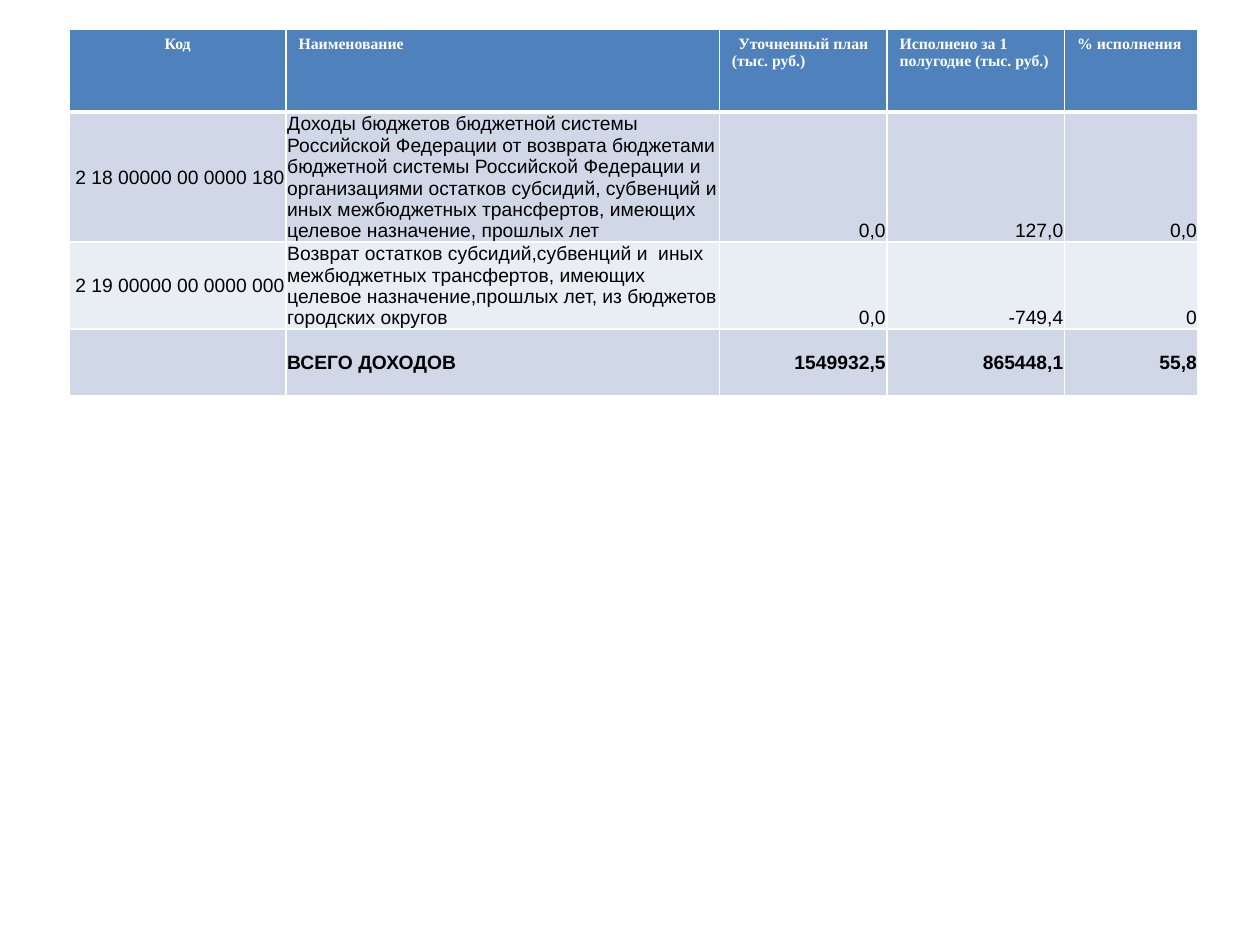
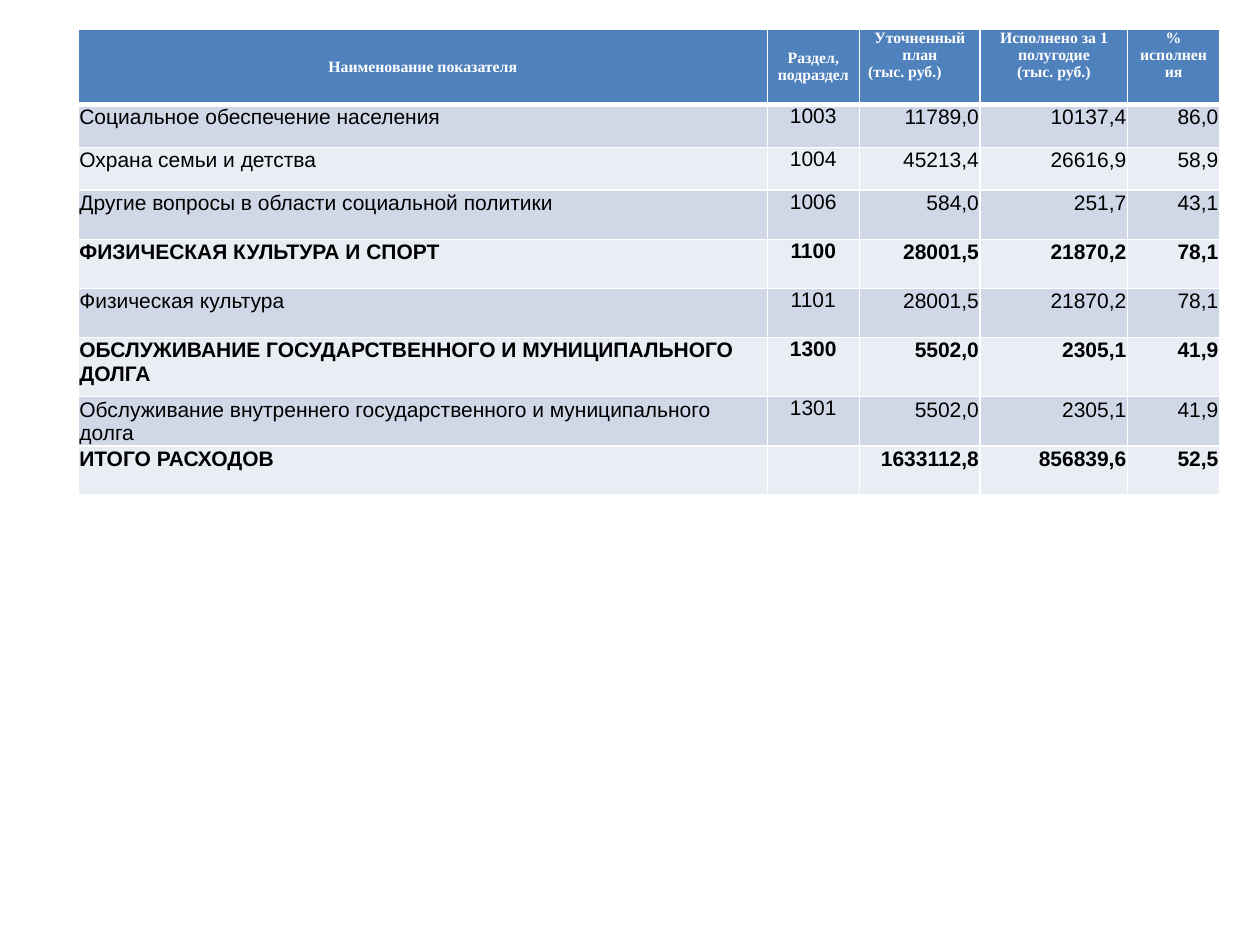
import pptx
import pptx.util
import pptx.dml.color
import pptx.enum.text
import pptx.oxml.ns
import lxml.etree
from dataclasses import dataclass

Inches = pptx.util.Inches
Pt = pptx.util.Pt
ALIGN = {"l": pptx.enum.text.PP_ALIGN.LEFT,
         "c": pptx.enum.text.PP_ALIGN.CENTER,
         "r": pptx.enum.text.PP_ALIGN.RIGHT}
ANCHOR = {"t": pptx.enum.text.MSO_ANCHOR.TOP,
          "m": pptx.enum.text.MSO_ANCHOR.MIDDLE,
          "b": pptx.enum.text.MSO_ANCHOR.BOTTOM}


@dataclass(frozen=True)
class Theme:
    header_fill: str = "4F81BD"
    bands: tuple = ("D0D8E8", "E9EDF4")
    grid: str = "FFFFFF"
    header_text: str = "FFFFFF"
    body_text: str = "000000"
    header_font: str = "Times New Roman"
    body_font: str = "Arial"
    header_size: int = 9
    grid_width: int = 1
    header_rule: int = 3


THEME = Theme()
TIGHT = (0.01, 0.01, 0.01, 0)   # left, top, right, bottom
SIDES = (0.07, 0, 0.07, 0)
ROOMY = (0.1, 0.05, 0.1, 0.05)

# Content: header lines carry one alignment letter each; rows are (bold, anchors, values)
INCOME = {
    "at": (0.55, 0.23),
    "columns": (1.72, 3.44, 1.33, 1.41, 1.06),
    "heights": (0.66, 1.03, 0.69, 0.53),
    "size": 11,
    "header": [("Код", "c"), ("Наименование", "l"),
               ("Уточненный план\n(тыс. руб.)", "cl"),
               ("Исполнено за 1 полугодие (тыс. руб.)", "l"),
               ("% исполнения", "l")],
    "header_anchors": "ttttt",
    "header_insets": ROOMY,
    "aligns": "rlrrr",
    "insets": [TIGHT] * 5,
    "rows": [
        (False, "mmbbb", (
            "2 18 00000 00 0000 180",
            "Доходы бюджетов бюджетной системы Российской Федерации от возврата "
            "бюджетами бюджетной системы Российской Федерации и организациями "
            "остатков субсидий, субвенций и иных межбюджетных трансфертов, "
            "имеющих целевое назначение, прошлых лет",
            "0,0", "127,0", "0,0")),
        (False, "mtbbb", (
            "2 19 00000 00 0000 000",
            "Возврат остатков субсидий,субвенций и  иных межбюджетных трансфертов, "
            "имеющих целевое назначение,прошлых лет, из бюджетов городских округов",
            "0,0", "-749,4", "0")),
        (True, "mmmmm", ("", "ВСЕГО ДОХОДОВ", "1549932,5", "865448,1", "55,8")),
    ],
}

EXPENSES = {
    "at": (0.62, 0.23),
    "columns": (5.47, 0.73, 0.96, 1.17, 0.73),
    "heights": (0.6, 0.34, 0.34, 0.39, 0.39, 0.39, 0.47, 0.39, 0.39),
    "size": 12,
    "header": [("Наименование показателя", "c"), ("Раздел, подраздел", "c"),
               ("Уточненный план\n(тыс. руб.)", "cl"),
               ("Исполнено за 1 полугодие\n(тыс. руб.)", "cc"),
               ("% исполнения", "c")],
    "header_anchors": "mmttt",
    "header_insets": SIDES,
    "aligns": "lcrrr",
    "insets": [TIGHT, SIDES, TIGHT, TIGHT, TIGHT],
    "rows": [(bold, "ttttt", values) for bold, *values in [
        (False, "Социальное обеспечение населения", "1003", "11789,0", "10137,4", "86,0"),
        (False, "Охрана семьи и детства", "1004", "45213,4", "26616,9", "58,9"),
        (False, "Другие вопросы в области социальной политики", "1006",
         "584,0", "251,7", "43,1"),
        (True, "ФИЗИЧЕСКАЯ КУЛЬТУРА И СПОРТ", "1100", "28001,5", "21870,2", "78,1"),
        (False, "Физическая культура", "1101", "28001,5", "21870,2", "78,1"),
        (True, "ОБСЛУЖИВАНИЕ ГОСУДАРСТВЕННОГО И МУНИЦИПАЛЬНОГО ДОЛГА", "1300",
         "5502,0", "2305,1", "41,9"),
        (False, "Обслуживание внутреннего государственного и муниципального долга",
         "1301", "5502,0", "2305,1", "41,9"),
        (True, "ИТОГО РАСХОДОВ", "", "1633112,8", "856839,6", "52,5"),
    ]],
}


def color(value):
    return pptx.dml.color.RGBColor.from_string(value)


# Cell borders, which must come before the fill in the cell properties
def set_borders(cell, top, bottom):
    properties = cell._tc.get_or_add_tcPr()
    qn = pptx.oxml.ns.qn
    widths = {"L": THEME.grid_width, "R": THEME.grid_width, "T": top, "B": bottom}
    for side, width in widths.items():
        line = lxml.etree.SubElement(properties, qn(f"a:ln{side}"), w=str(Pt(width)))
        solid = lxml.etree.SubElement(line, qn("a:solidFill"))
        lxml.etree.SubElement(solid, qn("a:srgbClr"), val=THEME.grid)


def style_cell(cell, text, aligns, anchor, insets, fill, font, size, ink, bold):
    cell.margin_left, cell.margin_top, cell.margin_right, cell.margin_bottom = map(
        Inches, insets)
    cell.vertical_anchor = ANCHOR[anchor]
    cell.fill.solid()
    cell.fill.fore_color.rgb = color(fill)
    cell.text_frame.text = text
    for para, align in zip(cell.text_frame.paragraphs, aligns):
        para.alignment = ALIGN[align]
        for span in para.runs:
            span.font.name, span.font.size = font, Pt(size)
            span.font.bold = bold
            span.font.color.rgb = color(ink)


def add_budget_table(deck, budget):
    page = deck.slides.add_slide(deck.slide_layouts[6])
    columns, heights = budget["columns"], budget["heights"]
    table = page.shapes.add_table(
        len(heights), len(columns), *map(Inches, budget["at"]),
        Inches(sum(columns)), Inches(sum(heights))).table
    for column, width in zip(table.columns, columns):
        column.width = Inches(width)
    for row, height in zip(table.rows, heights):
        row.height = Inches(height)

    # Header row
    for index, (text, aligns) in enumerate(budget["header"]):
        cell = table.cell(0, index)
        set_borders(cell, THEME.grid_width, THEME.header_rule)
        style_cell(cell, text, aligns, budget["header_anchors"][index],
                   budget["header_insets"], THEME.header_fill, THEME.header_font,
                   THEME.header_size, THEME.header_text, True)

    # Banded body rows
    for number, (bold, anchors, values) in enumerate(budget["rows"]):
        top = THEME.grid_width if number else THEME.header_rule
        for index, text in enumerate(values):
            cell = table.cell(number + 1, index)
            set_borders(cell, top, THEME.grid_width)
            style_cell(cell, text, budget["aligns"][index], anchors[index],
                       budget["insets"][index], THEME.bands[number % 2],
                       THEME.body_font, budget["size"], THEME.body_text, bold)


def main():
    deck = pptx.Presentation()
    deck.slide_width, deck.slide_height = Inches(10), Inches(7.5)
    for budget in (INCOME, EXPENSES):
        add_budget_table(deck, budget)
    deck.save("out.pptx")


if __name__ == "__main__":
    main()
